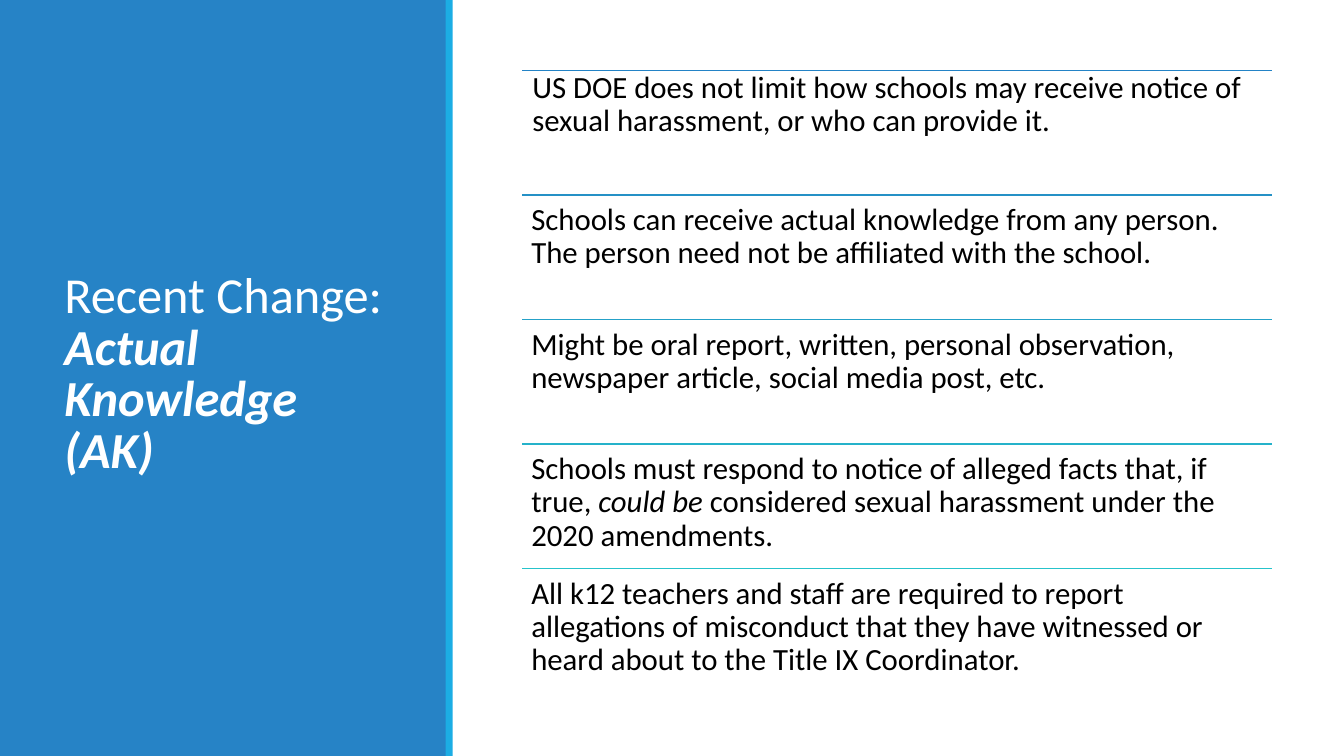
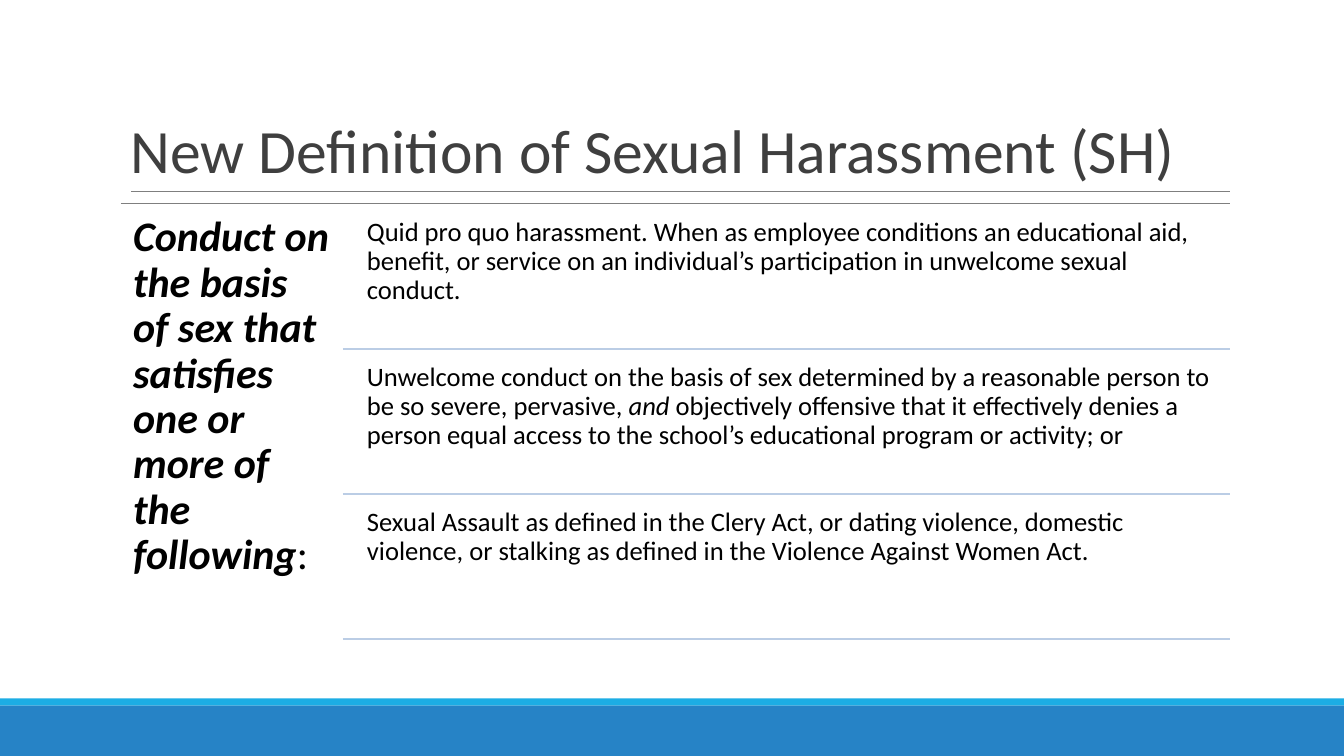
from dataclasses import dataclass

from lxml.etree import SubElement
from pptx import Presentation
from pptx.dml.color import RGBColor
from pptx.enum.shapes import MSO_CONNECTOR as CONNECTOR, MSO_SHAPE as SHAPE
from pptx.enum.text import MSO_ANCHOR as ANCHOR
from pptx.oxml.ns import qn
from pptx.util import Inches, Pt


@dataclass(frozen=True)
class Theme:
    font: str = "Calibri"
    blue: str = "2683C6"
    cyan: str = "1CADE4"
    white: str = "FFFFFF"
    black: str = "000000"
    title_gray: str = "3F3F3F"
    rule_gray: str = "7F7F7F"
    rule_pale: str = "BBCDE5"
    rule_steps: tuple = ("2383C6", "2591C6", "25A1C8", "25B2CA", "26C3CB")
    title_size: int = 44
    panel_title_size: int = 36
    lead_size: int = 30
    point_size: int = 22
    detail_size: int = 19
    title_spacing: float = 0.85
    body_spacing: float = 0.9


theme = Theme()
prs = Presentation()
prs.slide_width, prs.slide_height = Inches(13.33), Inches(7.5)
blank = prs.slide_layouts[6]


def add_text(slide, box, runs, *, size, color=theme.black, inset=(0.09, 0.09),
             anchor=ANCHOR.TOP, spacing=theme.body_spacing):
    """Add one paragraph; runs are (text, style), where style may hold b and i."""
    frame = slide.shapes.add_textbox(*map(Inches, box)).text_frame
    frame.word_wrap = True
    frame.vertical_anchor = anchor
    frame.margin_left = frame.margin_right = Inches(inset[0])
    frame.margin_top = frame.margin_bottom = Inches(inset[1])
    paragraph = frame.paragraphs[0]
    paragraph.line_spacing = spacing
    for text, style in runs:
        run = paragraph.add_run()
        run.text = text
        run.font.name, run.font.size = theme.font, Pt(size)
        run.font.bold, run.font.italic = "b" in style, "i" in style
        run.font.color.rgb = RGBColor.from_string(color)


def add_rule(slide, left, right, y, color, weight=1.25):
    """Add a horizontal line without a shadow."""
    rule = slide.shapes.add_connector(
        CONNECTOR.STRAIGHT, Inches(left), Inches(y), Inches(right), Inches(y))
    rule.line.color.rgb = RGBColor.from_string(color)
    rule.line.width = Pt(weight)
    SubElement(rule._element.spPr, qn("a:effectLst"))


knowledge = prs.slides.add_slide(blank)
definition = prs.slides.add_slide(blank)

bands = [
    (knowledge, (0, 0, 4.43, 7.5), theme.blue),
    (knowledge, (4.42, 0, 0.07, 7.5), theme.cyan),
    (definition, (0, 6.93, 13.33, 0.07), theme.cyan),
    (definition, (0, 7, 13.33, 0.5), theme.blue),
]
for slide, box, color in bands:
    band = slide.shapes.add_shape(SHAPE.RECTANGLE, *map(Inches, box))
    band.shadow.inherit = False
    band.fill.solid()
    band.fill.fore_color.rgb = RGBColor.from_string(color)
    band.line.fill.background()

# Slide 1: actual knowledge
add_text(knowledge, (0.54, 0.57, 3.37, 6.31),
         [("Recent Change: ", ""), ("Actual Knowledge (AK)", "bi")],
         size=theme.panel_title_size, color=theme.white, inset=(0.1, 0.05),
         anchor=ANCHOR.MIDDLE, spacing=theme.title_spacing)

points = [
    [("US DOE does not limit how schools may receive notice of sexual "
      "harassment, or who can provide it.", "")],
    [("Schools can receive actual knowledge from any person. The person need "
      "not be affiliated with the school.", "")],
    [("Might be oral report, written, personal observation, newspaper article, "
      "social media post, etc.", "")],
    [("Schools must respond to notice of alleged facts that, if true, ", ""),
     ("could be ", "i"),
     ("considered sexual harassment under the 2020 amendments.", "")],
    [("All k12 teachers and staff are required to report allegations of "
      "misconduct that they have witnessed or heard about to the Title IX "
      "Coordinator.", "")],
]
points_top, points_last = 0.7, 5.64
point_step = (points_last - points_top) / (len(points) - 1)
for index, (point, color) in enumerate(zip(points, theme.rule_steps)):
    top = points_top + index * point_step
    # The first point sits slightly closer to its rule.
    left, text_top = (5.19, 0.62) if index == 0 else (5.18, top)
    add_rule(knowledge, 5.18, 12.62, top, color)
    add_text(knowledge, (left, text_top, 7.43, 1.24), point,
             size=theme.point_size)

# Slide 2: definition of sexual harassment
add_rule(definition, 1.3, 12.2, 1.9, theme.rule_gray, weight=0.75)
add_text(definition, (1.2, 0.31, 11, 1.59),
         [("New Definition of Sexual Harassment (SH)", "")],
         size=theme.title_size, color=theme.title_gray, inset=(0.1, 0.05),
         anchor=ANCHOR.BOTTOM, spacing=theme.title_spacing)
add_rule(definition, 1.2, 12.2, 2.02, theme.rule_gray, weight=0.75)
add_text(definition, (1.2, 2.02, 2.2, 4.4),
         [("Conduct on the basis of sex that satisfies one or more of the "
           "following", "bi"), (":", "")],
         size=theme.lead_size, inset=(0.12, 0.12))

details = [
    [("Quid pro quo harassment. When as employee conditions an educational "
      "aid, benefit, or service on an individual’s participation in unwelcome "
      "sexual conduct.", "")],
    [("Unwelcome conduct on the basis of sex determined by a reasonable person "
      "to be so severe, pervasive, ", ""),
     ("and", "i"),
     (" objectively offensive that it effectively denies a person equal access "
      "to the school’s educational program or activity; or", "")],
    [("Sexual Assault as defined in the Clery Act, or dating violence, domestic "
      "violence, or stalking as defined in the Violence Against Women Act.", "")],
]
detail_height, detail_gap = 1.37, 0.07
for index, detail in enumerate(details):
    top = 2.09 + index * (detail_height + detail_gap)
    add_text(definition, (3.56, top, 8.63, detail_height), detail,
             size=theme.detail_size, inset=(0.08, 0.08))
    add_rule(definition, 3.4, 12.2, top + detail_height, theme.rule_pale)

prs.save("out.pptx")
